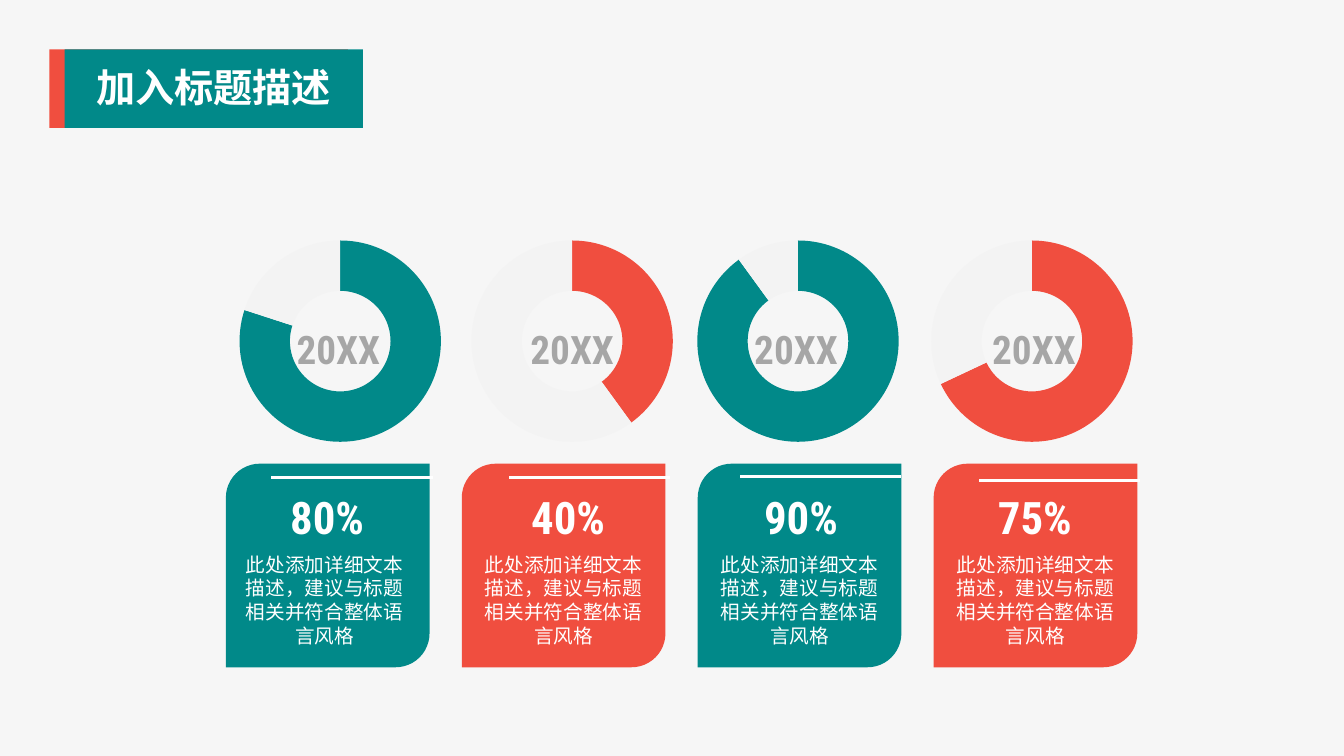
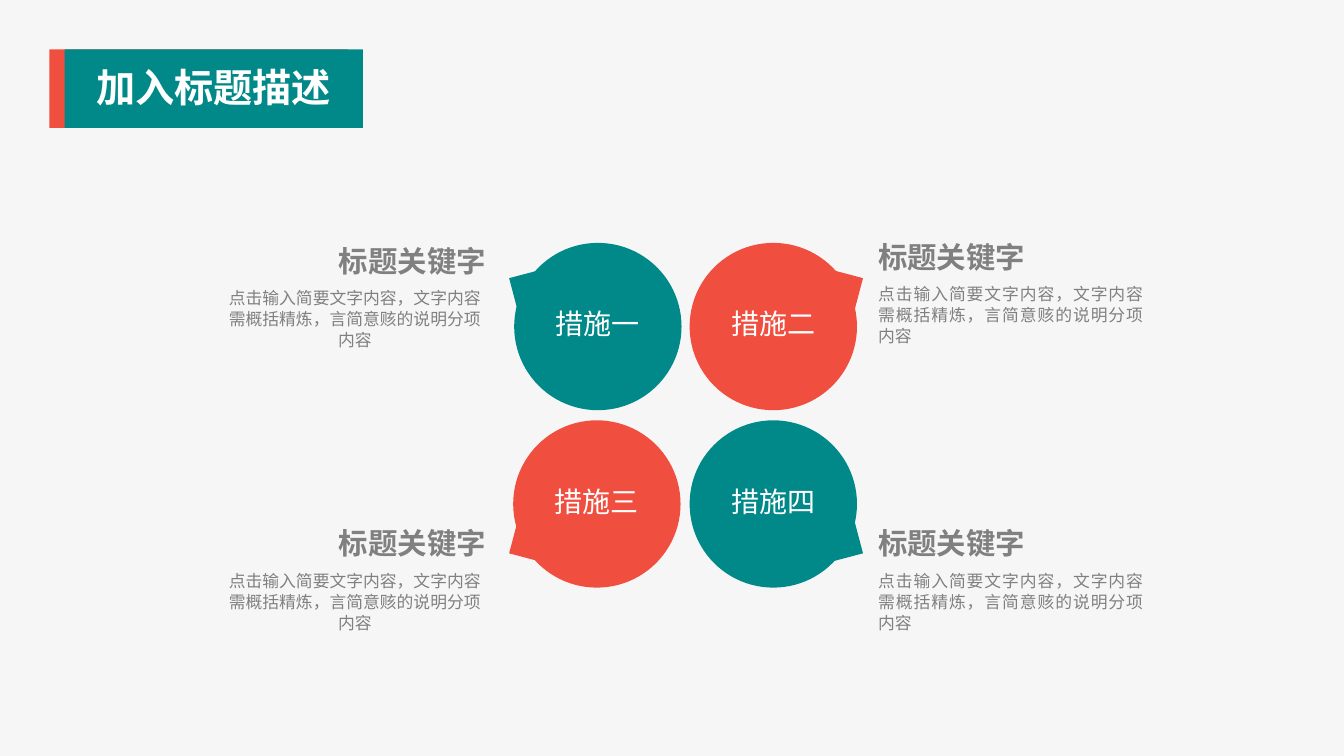
"""Build two slides: yearly doughnut cards and four measures."""
from itertools import product

from lxml.etree import SubElement
from pptx import Presentation
from pptx.chart.data import CategoryChartData
from pptx.dml.color import RGBColor
from pptx.enum.chart import XL_CHART_TYPE as Chart
from pptx.enum.shapes import MSO_CONNECTOR as Connector, MSO_SHAPE as Shape
from pptx.enum.text import MSO_ANCHOR as Anchor, PP_ALIGN as Align
from pptx.oxml.ns import qn
from pptx.util import Pt

PX = 9144
TEAL = RGBColor(0x01, 0x89, 0x89)
RED = RGBColor(0xF0, 0x4E, 0x3F)
WHITE = RGBColor(0xFF, 0xFF, 0xFF)
BLACK = RGBColor(0x00, 0x00, 0x00)
PAPER = RGBColor(0xF6, 0xF6, 0xF6)
TRACK = RGBColor(0xF3, 0xF3, 0xF3)
SILVER = RGBColor(0xA6, 0xA6, 0xA6)
GRAY = RGBColor(0x80, 0x80, 0x80)
CJK = "Noto Sans CJK SC"
NUMERIC = "Roboto Condensed"

CARD_TEXT = "此处添加详细文本描述，建议与标题相关并符合整体语言风格"
MEASURE_TEXT = "点击输入简要文字内容，文字内容需概括精炼，言简意赅的说明分项内容"
CARDS = [
    dict(label="80%", value=80, color=TEAL, chart=223, year=277, percent=254, body=237, rule=(269, 474)),
    dict(label="40%", value=40, color=RED, chart=453, year=509, percent=493, body=474, rule=(505, 474)),
    dict(label="90%", value=90, color=TEAL, chart=677, year=731, percent=724, body=708, rule=(734, 473)),
    dict(label="75%", value=68, color=RED, chart=909, year=967, percent=956, body=942, rule=(971, 477)),
]
MEASURES = [
    ("措施一", TEAL, 510, 241),
    ("措施二", RED, 684, 237),
    ("措施三", RED, 509, 521),
    ("措施四", TEAL, 684, 521),
]
BEAK = [(558, 262), (505, 276), (519, 329)]
MIRROR_X, MIRROR_Y = 1361, 825


class Deck:
    """Hold the style, the presentation and the current slide."""

    def __init__(self):
        self.prs = Presentation()
        self.prs.slide_width, self.prs.slide_height = 1333 * PX, 750 * PX

    def slide(self, title):
        """Start a slide with its title band."""
        self.s = self.prs.slides.add_slide(self.prs.slide_layouts[6])
        fill = self.s.background.fill
        fill.solid()
        fill.fore_color.rgb = PAPER
        self.shape(Shape.RECTANGLE, 49, 49, 296, 78, RED)
        self.shape(Shape.RECTANGLE, 64, 49, 296, 78, TEAL)
        self.text(title, 47, 59, 330, 55, 28, bold=True, anchor=Anchor.MIDDLE)

    def paint(self, sp, color):
        """Give a shape a plain fill."""
        sp.shadow.inherit = False
        sp.fill.solid()
        sp.fill.fore_color.rgb = color
        sp.line.fill.background()
        return sp

    def shape(self, kind, x, y, w, h, color):
        """Add a filled preset shape."""
        return self.paint(self.s.shapes.add_shape(kind, x * PX, y * PX, w * PX, h * PX), color)

    def polygon(self, points, color):
        """Add a filled closed outline."""
        builder = self.s.shapes.build_freeform(*points[0], scale=PX)
        builder.add_line_segments(points[1:], close=True)
        return self.paint(builder.convert_to_shape(), color)

    def label(self, sp, text, size, color=WHITE, font=CJK, bold=False,
              align=Align.CENTER, anchor=Anchor.TOP, top=0, bottom=0, leading=None):
        """Put one styled paragraph in a shape."""
        tf = sp.text_frame
        tf.word_wrap = True
        tf.vertical_anchor = anchor
        tf.margin_left = tf.margin_right = 0
        tf.margin_top, tf.margin_bottom = top * PX, bottom * PX
        p = tf.paragraphs[0]
        p.text = text
        p.alignment = align
        if leading:
            p.line_spacing = Pt(leading)
        p.font.size, p.font.bold, p.font.name = Pt(size), bold, font
        p.font.color.rgb = color
        SubElement(p._p.pPr.find(qn("a:defRPr")), qn("a:ea"), typeface=CJK)

    def text(self, text, x, y, w, h, size, **style):
        """Add a text box."""
        self.label(self.s.shapes.add_textbox(x * PX, y * PX, w * PX, h * PX), text, size, **style)

    def rule(self, x, y, w):
        """Add a thin white horizontal line."""
        line = self.s.shapes.add_connector(Connector.STRAIGHT, x * PX, y * PX, (x + w) * PX, y * PX)
        line.line.color.rgb = WHITE
        line.line.width = Pt(2)
        SubElement(line._element.spPr, qn("a:effectLst"))

    def doughnut(self, value, x, y, w, h, color):
        """Add a doughnut showing a share of 100."""
        data = CategoryChartData()
        data.categories = ["1", "2", "3", "4"]
        data.add_series("Series 1", (value, 100 - value, None, None))
        chart = self.s.shapes.add_chart(Chart.DOUGHNUT, x * PX, y * PX, w * PX, h * PX, data).chart
        chart.has_legend = chart.has_title = False
        chart.font.size, chart.font.name = Pt(18), "Calibri"
        chart.font.color.rgb = BLACK
        plot = chart.plots[0]
        plot.vary_by_categories = True
        for i, shade in enumerate((color, TRACK)):
            fmt = plot.series[0].points[i].format
            fmt.fill.solid()
            fmt.fill.fore_color.rgb = shade
            fmt.line.fill.background()
        plot._element.find(qn("c:holeSize")).set("val", "70")
        self.inset_plot(plot._element.getparent())

    def inset_plot(self, area):
        """Centre the plot area inside its chart."""
        for old in area.findall(qn("c:layout")):
            area.remove(old)
        layout = SubElement(area, qn("c:layout"))
        area.insert(0, layout)
        manual = SubElement(layout, qn("c:manualLayout"))
        for tag, val in (("layoutTarget", "inner"), ("xMode", "edge"), ("yMode", "edge"),
                         ("x", "0.06"), ("y", "0.06"), ("w", "0.88"), ("h", "0.88")):
            SubElement(manual, qn(f"c:{tag}"), val=val)


def build_cards(deck):
    """Draw four doughnuts, each above its card."""
    deck.slide("加入标题描述")
    for i, card in enumerate(CARDS):
        color = card["color"]
        deck.doughnut(card["value"], card["chart"], 225, 229, 227, color)
        deck.shape(Shape.ROUND_2_DIAG_RECTANGLE, 224 + 234 * i, 460, 202, 202, color)
        deck.text("20XX", card["year"], 318, 117, 52, 28, color=SILVER, font=NUMERIC, bold=True, top=5)
        deck.text(card["label"], card["percent"], 481, 141, 59, 32, font=NUMERIC, bold=True, top=5)
        deck.text(CARD_TEXT, card["body"], 543, 170, 99, 14, font="Arial", top=5, leading=17)
        deck.rule(*card["rule"], 160)


def build_measures(deck):
    """Draw four speech circles with their notes."""
    deck.slide("加入标题描述")
    for (low, right), (label, color, x, y) in zip(product((False, True), repeat=2), MEASURES):
        beak = [(MIRROR_X - px if right else px, MIRROR_Y - py if low else py) for px, py in BEAK]
        deck.polygon(beak, color)
        circle = deck.shape(Shape.OVAL, x, 417 if low else 241, 166, 166, color)
        deck.label(circle, label, 20, anchor=Anchor.MIDDLE, bottom=6)
        note_x, note_w, align = (871, 263, Align.JUSTIFY) if right else (222, 260, Align.CENTER)
        deck.text(MEASURE_TEXT, note_x, y + 44, note_w, 63, 12, color=GRAY, align=align, leading=15)
        head_x, align = (871, Align.LEFT) if right else (250, Align.RIGHT)
        deck.text("标题关键字", head_x, y, 232, 35, 21, color=GRAY, bold=True,
                  align=align, anchor=Anchor.MIDDLE)


def main():
    """Build and save the deck."""
    deck = Deck()
    build_cards(deck)
    build_measures(deck)
    deck.prs.save("out.pptx")


if __name__ == "__main__":
    main()
